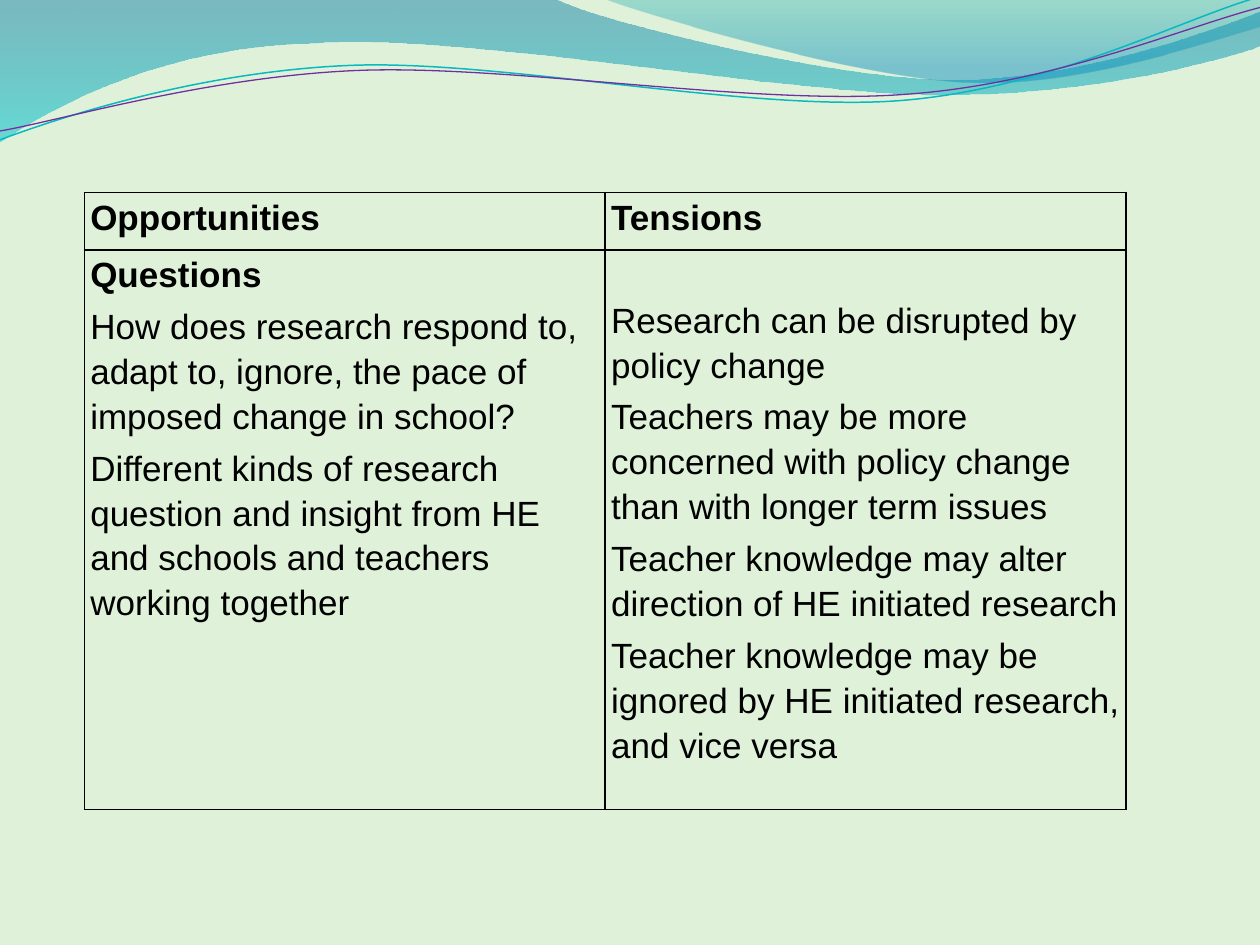
from math import cos, radians, sin

from pptx import Presentation
from pptx.dml.color import RGBColor
from pptx.oxml import parse_xml
from pptx.oxml.ns import nsdecls, qn
from pptx.util import Cm, Pt

COLORS = {
    "background": "DFF2D9", "text": "000000", "border": "000000",
    "deep_blue": "0074A1", "aqua": "00C6CF", "teal": "00A1A9",
    "blue": "008BBF", "cyan_line": "0AB8BF", "purple_line": "7030A0",
}
FONT = "Arial"
TILT = -2.7

LONG_WAVE = [
    (0, 0), (4.4, -0.01),
    (4.76, 0.17, 6.64, 0.63, 7.58, 0.63), (8.53, 0.63, 9.58, 0.26, 10, 0.09),
    (10.01, 0.36),
    (9.83, 0.44, 8.7, 0.76, 7.46, 0.75), (6.22, 0.75, 3.82, 0.28, 2.57, 0.34),
    (1.29, 0.36, 0.46, 0.83, -0.01, 1.13),
]
RIGHT_WAVE = [
    (4.79, -0.01),
    (5.09, 0.11, 6.82, 0.62, 7.69, 0.65), (8.56, 0.69, 9.61, 0.32, 10, 0.21),
    (10, 0),
]
CYAN_CURVE = [
    (0, 1.11), (0.48, 0.93, 1.58, 0.57, 2.77, 0.52),
    (3.95, 0.47, 5.93, 0.89, 7.13, 0.8), (8.33, 0.71, 9.38, 0.15, 9.98, -0.02),
]
PURPLE_CURVE = [
    (0, 1.04), (0.47, 0.96, 1.64, 0.61, 2.83, 0.56),
    (4.03, 0.51, 5.97, 0.84, 7.17, 0.75), (8.36, 0.67, 9.41, 0.21, 10, 0.06),
]

HEADINGS = ["Opportunities", "Tensions"]
OPPORTUNITIES = [
    ("Questions", True),
    ("How does research respond to, adapt to, ignore, the pace of imposed "
     "change in school?", False),
    ("Different kinds of research question and insight from HE and schools "
     "and teachers working together", False),
]
TENSIONS = [
    ("Research can be disrupted by policy change", False),
    ("Teachers may be more concerned with policy change than with longer "
     "term issues", False),
    ("Teacher knowledge may alter direction of HE initiated research", False),
    ("Teacher knowledge may be ignored by HE initiated research, and vice "
     "versa", False),
]


def rgb(name):
    """Return the named palette colour."""
    return RGBColor.from_string(COLORS[name])


def to_points(segment, tilt):
    """Turn a segment in inches into slide points, levelled by the tilt."""
    c, n = cos(radians(-tilt)), sin(radians(-tilt))
    pairs = zip(segment[::2], segment[1::2])
    if tilt:
        pairs = [(5 + (x - 5) * c - (y - 0.58) * n,
                  0.58 + (x - 5) * n + (y - 0.58) * c) for x, y in pairs]
    return [(Cm(x * 2.54), Cm(y * 2.54)) for x, y in pairs]


def add_outline(slide, segments, close, tilt=0):
    """Add a freeform of straight and cubic segments without shadow."""
    parts = [to_points(segment, tilt) for segment in segments]
    builder = slide.shapes.build_freeform(*parts[0][0])
    builder.add_line_segments([part[-1] for part in parts[1:]], close=close)
    s = builder.convert_to_shape()
    s.shadow.inherit = False
    lines = list(s._element.spPr.iter(qn("a:lnTo")))
    for line, part in zip(lines, parts[1:]):
        if len(part) == 3:
            knots = "".join(f'<a:pt x="{x - s.left}" y="{y - s.top}"/>'
                            for x, y in part)
            line.getparent().replace(line, parse_xml(
                f'<a:cubicBezTo {nsdecls("a")}>{knots}</a:cubicBezTo>'))
    s.rotation = tilt
    return s


def add_wave(slide, segments, stops):
    """Add a wave with a translucent gradient running downwards."""
    s = add_outline(slide, segments, True)
    s.line.fill.background()
    s.fill.gradient()
    s.fill.gradient_angle = 270
    for stop, (position, color, _) in zip(s.fill.gradient_stops, stops):
        stop.position = position
        stop.color.rgb = rgb(color)
    colors = s._element.spPr.iter(qn("a:srgbClr"))
    for node, (_, _, opacity) in zip(list(colors), stops):
        node.append(parse_xml(
            f'<a:alpha {nsdecls("a")} val="{opacity * 1000}"/>'))


def add_curve(slide, segments, color, width):
    """Add an open curved line, slightly tilted."""
    s = add_outline(slide, segments, False, TILT)
    s.fill.background()
    s.line.color.rgb = rgb(color)
    s.line.width = Pt(width)


def set_borders(cell):
    """Draw a thin line on all four sides of a cell."""
    tc_pr = cell._tc.get_or_add_tcPr()
    for i, side in enumerate(("lnL", "lnR", "lnT", "lnB")):
        tc_pr.insert(i, parse_xml(
            f'<a:{side} {nsdecls("a")} w="{Pt(1)}"><a:solidFill>'
            f'<a:srgbClr val="{COLORS["border"]}"/></a:solidFill></a:{side}>'))


def fill_cell(cell, lines, space_after=0, top=0):
    """Write the lines into an unfilled, bordered cell."""
    cell.fill.background()
    set_borders(cell)
    cell.margin_left = cell.margin_right = Cm(0.12)
    cell.margin_top, cell.margin_bottom = Cm(top), Cm(0)
    tf = cell.text_frame
    for i, (text, bold) in enumerate(lines):
        p = tf.add_paragraph() if i else tf.paragraphs[0]
        p.line_spacing = 1.15
        p.space_after = Pt(space_after)
        r = p.add_run()
        r.text = text
        r.font.name, r.font.size, r.font.bold = FONT, Pt(20), bold
        r.font.color.rgb = rgb("text")


def add_comparison(slide):
    """Add the table of opportunities and tensions."""
    frame = slide.shapes.add_table(2, 2, Cm(1.7), Cm(3.88), Cm(21), Cm(12.44))
    table = frame.table
    table.first_row = table.horz_banding = False
    for row, height in zip(table.rows, (1.16, 11.28)):
        row.height = Cm(height)
    for col, heading in enumerate(HEADINGS):
        fill_cell(table.cell(0, col), [(heading, True)])
    fill_cell(table.cell(1, 0), OPPORTUNITIES, 4)
    fill_cell(table.cell(1, 1), TENSIONS, 4, 0.92)


def main():
    """Build and save the slide."""
    prs = Presentation()
    prs.slide_width, prs.slide_height = Cm(25.4), Cm(19.05)
    slide = prs.slides.add_slide(prs.slide_layouts[6])
    slide.background.fill.solid()
    slide.background.fill.fore_color.rgb = rgb("background")
    add_wave(slide, LONG_WAVE, [(0, "deep_blue", 45), (1, "aqua", 55)])
    add_wave(slide, RIGHT_WAVE, [(0, "teal", 30), (0.8, "blue", 45)])
    add_curve(slide, CYAN_CURVE, "cyan_line", 0.85)
    add_curve(slide, PURPLE_CURVE, "purple_line", 0.75)
    add_comparison(slide)
    prs.save("out.pptx")


if __name__ == "__main__":
    main()
